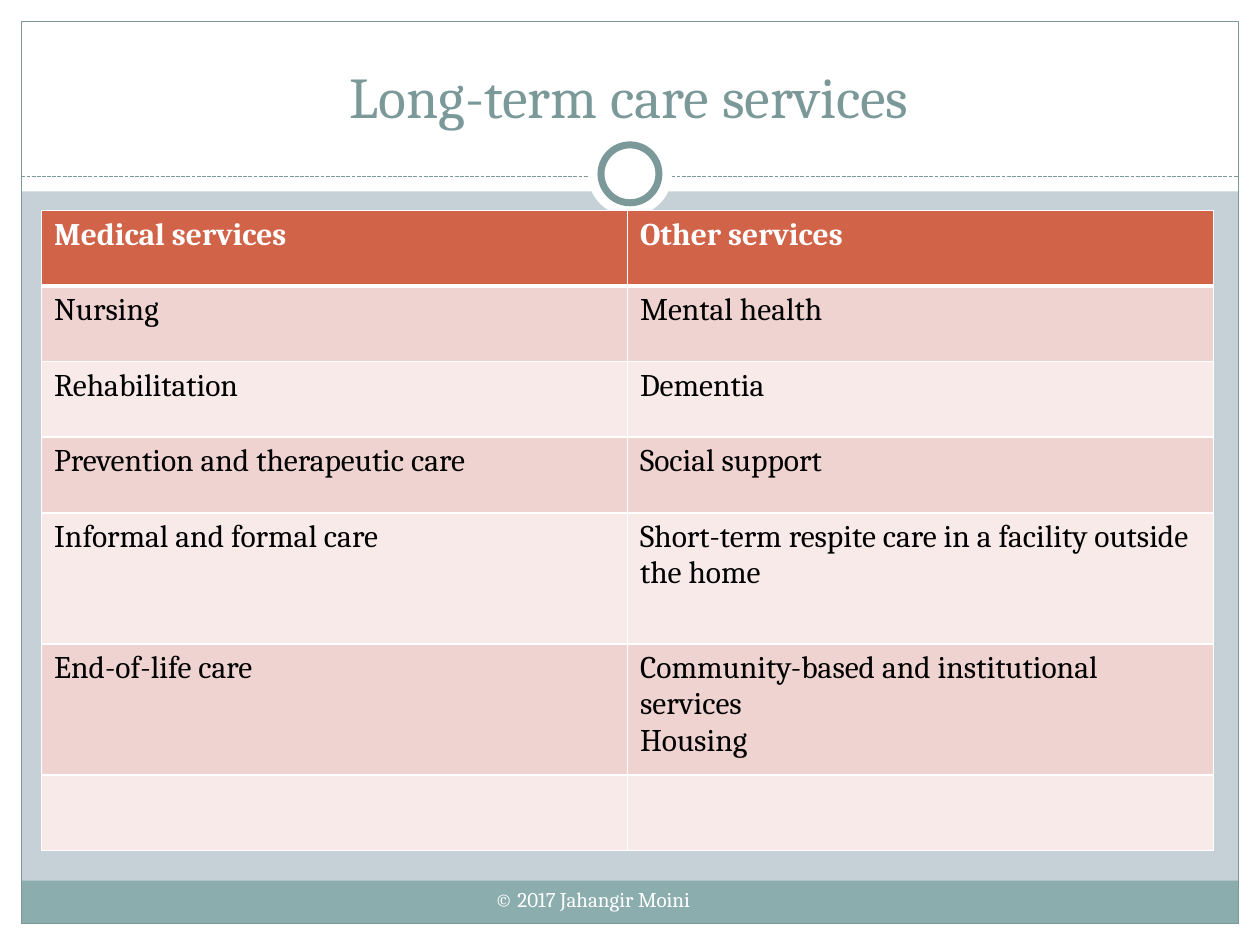
from lxml.etree import SubElement
from pptx import Presentation
from pptx.dml.color import RGBColor
from pptx.enum.dml import MSO_LINE
from pptx.enum.shapes import MSO_CONNECTOR, MSO_SHAPE
from pptx.enum.text import MSO_ANCHOR, PP_ALIGN
from pptx.oxml.ns import qn
from pptx.util import Inches, Pt

# Content
TITLE = "Long-term care services"
FOOTER = "© 2017 Jahangir Moini"
SERVICES = [
    (["Medical services"], ["Other services"]),
    (["Nursing"], ["Mental health"]),
    (["Rehabilitation"], ["Dementia"]),
    (["Prevention and therapeutic care"], ["Social support"]),
    (["Informal and formal care"],
     ["Short-term respite care in a facility outside the home"]),
    (["End-of-life care"],
     ["Community-based and institutional services", "Housing"]),
    ([], []),
]
ROW_HEIGHTS = [0.6, 0.6, 0.6, 0.6, 1.04, 1.04, 0.6]

# Style
FONT = "Cambria"
WHITE = RGBColor(0xFF, 0xFF, 0xFF)
BLACK = RGBColor(0, 0, 0)
BACKDROP = RGBColor(0xC5, 0xD1, 0xD7)
TEAL = RGBColor(0x7C, 0x99, 0x9A)
FOOTER_BAND = RGBColor(0x8C, 0xAD, 0xAE)
HEADER_FILL = RGBColor(0xD1, 0x63, 0x49)
ROW_FILLS = [RGBColor(0xF7, 0xEA, 0xE9), RGBColor(0xEE, 0xD3, 0xD0)]

# Layout in inches
WIDTH, HEIGHT = 10, 7.5
MARGIN = 0.17
INNER_WIDTH, INNER_BOTTOM = WIDTH - 2 * MARGIN, HEIGHT - MARGIN
HEAD_HEIGHT, RULE_Y = 1.52, 1.4
FOOTER_TOP = 6.99
RING_CENTER_Y = 1.38
TABLE_LEFT, TABLE_TOP, COLUMN_WIDTH = 0.33, 1.67, 4.65

prs = Presentation()
prs.slide_width, prs.slide_height = Inches(WIDTH), Inches(HEIGHT)
slide = prs.slides.add_slide(prs.slide_layouts[5])
slide.background.fill.solid()
slide.background.fill.fore_color.rgb = BACKDROP


def box(*lengths):
    return [Inches(length) for length in lengths]


def add_panel(kind, bounds, fill=None, line=None, line_width=0.75):
    panel = slide.shapes.add_shape(kind, *box(*bounds))
    panel.shadow.inherit = False
    if fill is None:
        panel.fill.background()
    else:
        panel.fill.solid()
        panel.fill.fore_color.rgb = fill
    if line is None:
        panel.line.fill.background()
    else:
        panel.line.color.rgb = line
        panel.line.width = Pt(line_width)


def add_run(paragraph, text, size, color, bold=False):
    run = paragraph.add_run()
    run.text = text
    run.font.name, run.font.size, run.font.bold = FONT, Pt(size), bold
    run.font.color.rgb = color


def add_border(cell, side, width):
    line = SubElement(cell._tc.get_or_add_tcPr(), qn(f"a:ln{side}"), w=str(Pt(width)))
    fill = SubElement(line, qn("a:solidFill"))
    SubElement(fill, qn("a:srgbClr"), val=str(WHITE))


# White margins and head, footer band, frame
for bounds in [(0, INNER_BOTTOM, WIDTH, MARGIN), (0, 0, WIDTH, HEAD_HEIGHT),
               (0, 0, MARGIN, HEIGHT), (WIDTH - MARGIN, 0, MARGIN, HEIGHT)]:
    add_panel(MSO_SHAPE.RECTANGLE, bounds, WHITE)
add_panel(MSO_SHAPE.RECTANGLE,
          (MARGIN, FOOTER_TOP, INNER_WIDTH, INNER_BOTTOM - FOOTER_TOP), FOOTER_BAND)
add_panel(MSO_SHAPE.RECTANGLE,
          (MARGIN, MARGIN, INNER_WIDTH, INNER_BOTTOM - MARGIN), line=TEAL)

# Dashed rule and ring
rule = slide.shapes.add_connector(
    MSO_CONNECTOR.STRAIGHT, *box(MARGIN, RULE_Y, WIDTH - MARGIN, RULE_Y))
rule.line.color.rgb = TEAL
rule.line.width = Pt(0.75)
rule.line.dash_style = MSO_LINE.SQUARE_DOT
SubElement(rule._element.spPr, qn("a:effectLst"))
for diameter, outline in [(0.67, None), (0.46, TEAL)]:
    add_panel(MSO_SHAPE.OVAL, (WIDTH / 2 - diameter / 2, RING_CENTER_Y - diameter / 2,
                               diameter, diameter), WHITE, outline, 4)

# Footer
footer = slide.shapes.add_textbox(*box(3.83, FOOTER_TOP, 2.35, 0.4))
footer.text_frame.word_wrap = True
add_run(footer.text_frame.paragraphs[0], FOOTER, 12, WHITE)

# Title, brought in front of the panels
title = slide.shapes.title
title.left, title.top, title.width, title.height = box(0.33, 0.25, 9.33, 0.83)
title.text_frame.vertical_anchor = MSO_ANCHOR.BOTTOM
title.text_frame.paragraphs[0].alignment = PP_ALIGN.CENTER
add_run(title.text_frame.paragraphs[0], TITLE, 33, TEAL)
slide.shapes._spTree.append(title._element)

# Services table
table = slide.shapes.add_table(
    len(SERVICES), 2,
    *box(TABLE_LEFT, TABLE_TOP, 2 * COLUMN_WIDTH, sum(ROW_HEIGHTS))).table
for column in table.columns:
    column.width = Inches(COLUMN_WIDTH)
for r, (services, height) in enumerate(zip(SERVICES, ROW_HEIGHTS)):
    table.rows[r].height = Inches(height)
    header = r == 0
    for c, lines in enumerate(services):
        cell = table.cell(r, c)
        for side in "LRTB":
            heavy = (header and side == "B") or (r == 1 and side == "T")
            add_border(cell, side, 3 if heavy else 1)
        cell.fill.solid()
        cell.fill.fore_color.rgb = HEADER_FILL if header else ROW_FILLS[r % 2]
        frame = cell.text_frame
        for i, line in enumerate(lines):
            paragraph = frame.add_paragraph() if i else frame.paragraphs[0]
            add_run(paragraph, line, 18, WHITE if header else BLACK, header)

prs.save("out.pptx")
